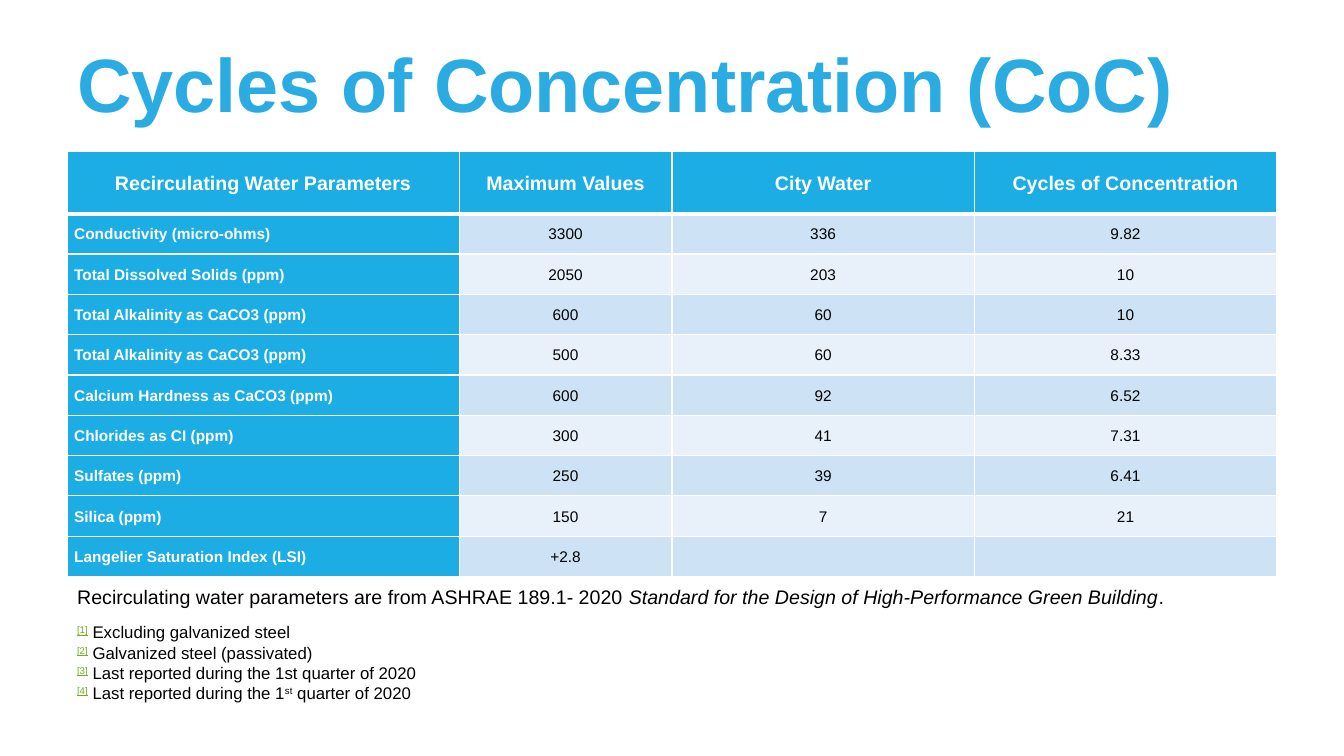
import dataclasses
import typing

import pptx
import pptx.dml.color
import pptx.enum.text
import pptx.oxml
import pptx.oxml.ns
import pptx.util

Pt = pptx.util.Pt
RGB = pptx.dml.color.RGBColor.from_string
ALIGN = pptx.enum.text.PP_ALIGN
ANCHOR = pptx.enum.text.MSO_ANCHOR
AUTO_SIZE = pptx.enum.text.MSO_AUTO_SIZE


@dataclasses.dataclass(frozen=True)
class Theme:
    font: str = "Arial"
    title: str = "2AACE3"
    accent: str = "1CADE4"
    dark_band: str = "CDE3F5"
    light_band: str = "E8F1FA"
    white: str = "FFFFFF"
    black: str = "000000"
    reference: str = "6EAC1C"
    title_size: float = 54
    header_size: float = 14
    source_size: float = 14
    note_size: float = 12
    cell_size: float = 11


THEME = Theme()


class Span(typing.NamedTuple):
    text: str
    color: str = THEME.black
    bold: bool = False
    italic: bool = False
    underline: bool = False
    raised: bool = False


class Area(typing.NamedTuple):
    left: float
    top: float
    width: float
    height: float


class Parameter(typing.NamedTuple):
    label: str
    maximum: str
    supply: str = ""
    cycles: str = ""


HEADERS = Parameter("Recirculating Water Parameters", "Maximum Values", "City Water", "Cycles of Concentration")
PARAMETERS = [
    Parameter("Conductivity (micro-ohms)", "3300", "336", "9.82"),
    Parameter("Total Dissolved Solids (ppm)", "2050", "203", "10"),
    Parameter("Total Alkalinity as CaCO3 (ppm)", "600", "60", "10"),
    Parameter("Total Alkalinity as CaCO3 (ppm)", "500", "60", "8.33"),
    Parameter("Calcium Hardness as CaCO3 (ppm)", "600", "92", "6.52"),
    Parameter("Chlorides as CI (ppm)", "300", "41", "7.31"),
    Parameter("Sulfates (ppm)", "250", "39", "6.41"),
    Parameter("Silica (ppm)", "150", "7", "21"),
    Parameter("Langelier Saturation Index (LSI)", "+2.8"),
]
SOURCE = [
    Span("Recirculating water parameters are from ASHRAE 189.1- 2020 "),
    Span("Standard for the Design of High-Performance Green Building", italic=True),
    Span("."),
]
NOTES = [
    [Span(" Excluding galvanized steel")],
    [Span(" Galvanized steel (passivated)")],
    [Span(" Last reported during the 1st quarter of 2020")],
    [Span(" Last reported during the 1"), Span("st", raised=True), Span(" quarter of 2020")],
]

TITLE_AREA = Area(48, 18, 864, 90)
TABLE_AREA = Area(48, 108, 864, 303.84)
SOURCE_AREA = Area(48, 414, 912, 24.24)
NOTES_AREA = Area(48, 440.4, 260, 65.6)
COLUMN_WIDTHS = [280, 152, 216, 216]
HEADER_HEIGHT = 44.64
ROW_HEIGHT = 28.8
RULE = 1
HEADER_RULE = 3


def apply(target: typing.Any, values: dict[str, typing.Any]) -> None:
    for name, value in values.items():
        setattr(target, name, value)


def place(shape: typing.Any, area: Area) -> None:
    apply(shape, {name: Pt(value) for name, value in area._asdict().items()})


def write(para: typing.Any, spans: list[Span], size: float) -> None:
    for span in spans:
        run = para.add_run()
        run.text = span.text
        apply(run.font, {
            "name": THEME.font,
            "size": Pt(size),
            "bold": span.bold,
            "italic": span.italic,
            "underline": span.underline,
        })
        run.font.color.rgb = RGB(span.color)
        if span.raised:
            run._r.get_or_add_rPr().set("baseline", "30000")


def add_border(cell: typing.Any, side: str, width: float) -> None:
    cell._tc.get_or_add_tcPr().append(pptx.oxml.parse_xml(
        f'<a:ln{side} {pptx.oxml.ns.nsdecls("a")} w="{Pt(width)}"><a:solidFill>'
        f'<a:srgbClr val="{THEME.white}"/></a:solidFill></a:ln{side}>'
    ))


def fill_cell(cell: typing.Any, text: str, row: int, column: int) -> None:
    is_header = row == 0
    is_accent = is_header or column == 0
    apply(cell, {
        "margin_left": Pt(5),
        "margin_right": Pt(5),
        "margin_top": 0,
        "margin_bottom": 0,
        "vertical_anchor": ANCHOR.MIDDLE,
    })
    widths = {
        "L": RULE,
        "R": RULE,
        "T": HEADER_RULE if row == 1 else RULE,
        "B": HEADER_RULE if is_header else RULE,
    }
    for side, width in widths.items():
        add_border(cell, side, width)
    cell.fill.solid()
    band = THEME.dark_band if row % 2 else THEME.light_band
    cell.fill.fore_color.rgb = RGB(THEME.accent if is_accent else band)
    para = cell.text_frame.paragraphs[0]
    apply(para, {
        "alignment": ALIGN.CENTER if is_header or column else ALIGN.LEFT,
        "line_spacing": 1.07,
    })
    if text:
        span = Span(text, THEME.white if is_accent else THEME.black, bold=is_accent)
        write(para, [span], THEME.header_size if is_header else THEME.cell_size)


def add_parameter_table(page: typing.Any) -> None:
    rows = [HEADERS, *PARAMETERS]
    frame = page.shapes.add_table(len(rows), len(HEADERS), *map(Pt, TABLE_AREA))
    table = frame.table
    for column, width in zip(table.columns, COLUMN_WIDTHS):
        column.width = Pt(width)
    for index, values in enumerate(rows):
        table.rows[index].height = Pt(ROW_HEIGHT if index else HEADER_HEIGHT)
        for column, text in enumerate(values):
            fill_cell(table.cell(index, column), text, index, column)


def add_text(page: typing.Any, area: Area, lines: list[list[Span]], size: float, frame_format: dict[str, typing.Any]) -> None:
    box = page.shapes.add_textbox(*map(Pt, area))
    apply(box.text_frame, frame_format)
    for index, spans in enumerate(lines):
        para = box.text_frame.add_paragraph() if index else box.text_frame.paragraphs[0]
        write(para, spans, size)


def add_title(page: typing.Any) -> None:
    title = page.shapes.title
    place(title, TITLE_AREA)
    apply(title.text_frame, {
        "vertical_anchor": ANCHOR.MIDDLE,
        "auto_size": AUTO_SIZE.NONE,
        "word_wrap": True,
    })
    para = title.text_frame.paragraphs[0]
    apply(para, {"alignment": ALIGN.LEFT, "line_spacing": 0.9})
    write(para, [Span("Cycles of Concentration (CoC)", THEME.title, bold=True)], THEME.title_size)


def main() -> None:
    deck = pptx.Presentation()
    apply(deck, {"slide_width": Pt(960), "slide_height": Pt(540)})
    page = deck.slides.add_slide(deck.slide_layouts.get_by_name("Title Only"))
    add_title(page)
    add_parameter_table(page)
    add_text(page, SOURCE_AREA, [SOURCE], THEME.source_size,
             {"word_wrap": True, "auto_size": AUTO_SIZE.SHAPE_TO_FIT_TEXT})
    notes = [
        [Span(f"[{number}]", THEME.reference, underline=True, raised=True), *spans]
        for number, spans in enumerate(NOTES, 1)
    ]
    add_text(page, NOTES_AREA, notes, THEME.note_size,
             {"word_wrap": False, "auto_size": AUTO_SIZE.SHAPE_TO_FIT_TEXT, "vertical_anchor": ANCHOR.MIDDLE})
    deck.save("out.pptx")


if __name__ == "__main__":
    main()
